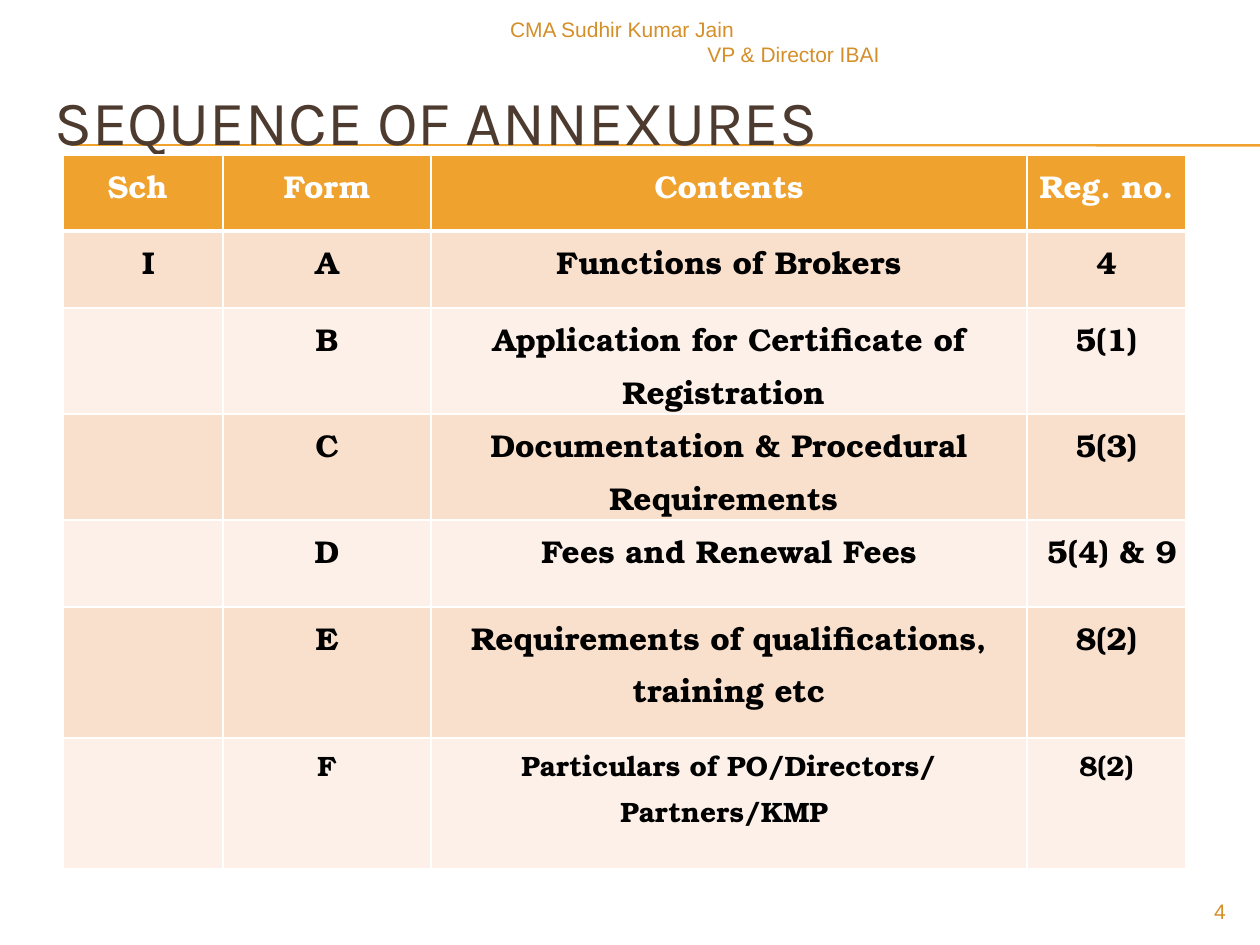
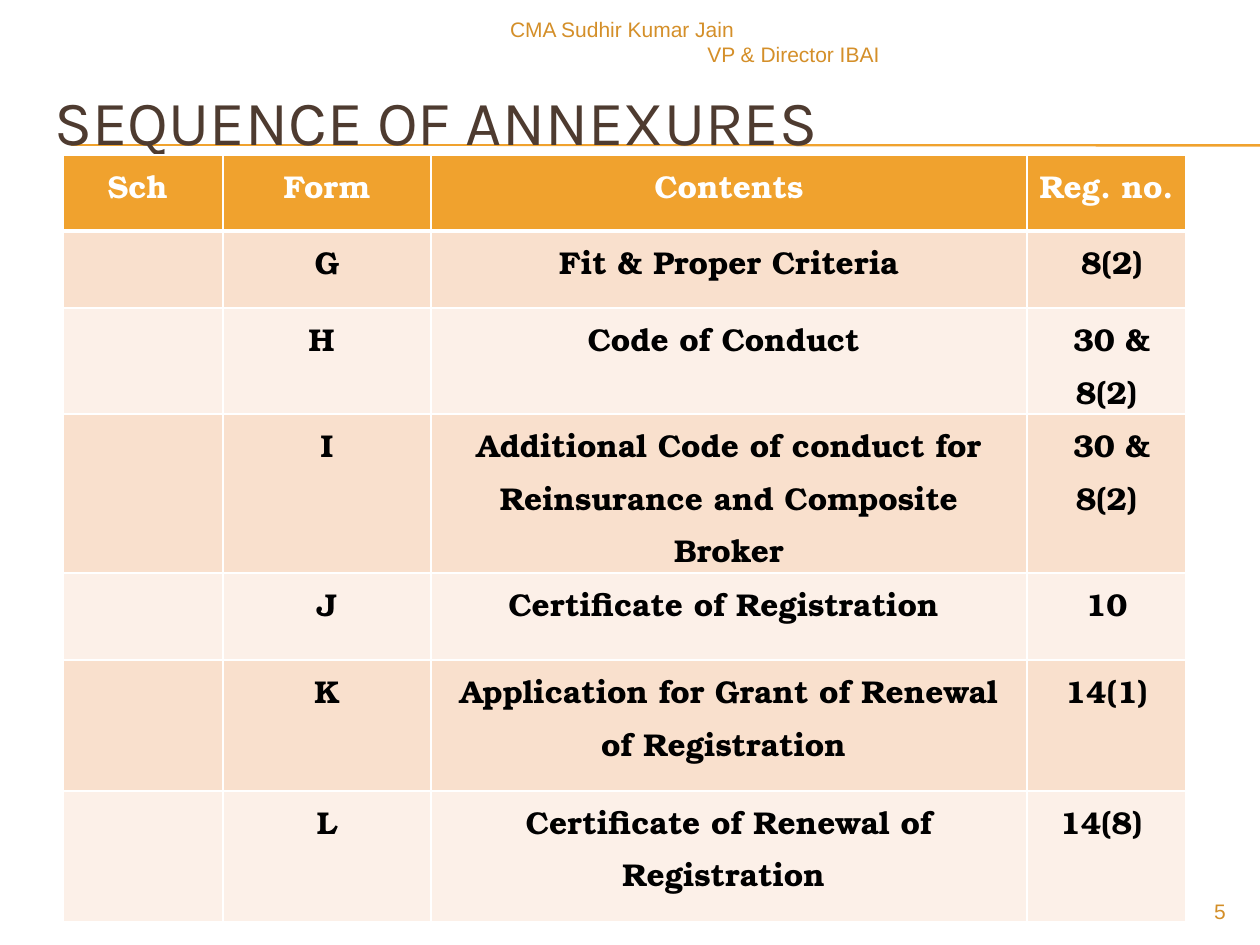
"""Build two slides listing the annexures with their forms and regulations."""
from lxml.etree import SubElement as Sub
from pptx import Presentation
from pptx.dml.color import RGBColor as Rgb
from pptx.enum.shapes import MSO_CONNECTOR as Conn
from pptx.enum.text import MSO_ANCHOR as Anchor, PP_ALIGN as Align
from pptx.oxml import parse_xml
from pptx.oxml.ns import nsdecls, qn
from pptx.util import Emu, Pt

TITLE = "SEQUENCE OF ANNEXURES"
NAME, ROLE = "CMA Sudhir Kumar Jain", "VP & Director IBAI"
HEAD = ("Sch ", "Form", "Contents", "Reg. no.")
PAGES = [
    {
        "no": "4",
        "heights": (76, 77, 106, 106, 87, 131, 131),
        "small": {6},
        "rows": [
            (" I", "A", "Functions of Brokers", "4"),
            ("", "B", "Application for Certificate of Registration ", "5(1)"),
            ("", "C", "Documentation & Procedural Requirements ", "5(3)"),
            ("", "D", "Fees and Renewal Fees", " 5(4) & 9"),
            ("", "E", "Requirements of qualifications, training etc", "8(2)"),
            ("", "F", "Particulars of PO/Directors/ Partners/KMP ", "8(2)"),
        ],
    },
    {
        "no": "5",
        "heights": (76, 77, 106, 159, 87, 131, 131),
        "small": set(),
        "rows": [
            ("", "G", "Fit & Proper Criteria", " 8(2)"),
            ("", "H ", "Code of Conduct ", " 30 & 8(2)"),
            ("", "I", "Additional Code of conduct for Reinsurance and Composite Broker", " 30 & 8(2)"),
            ("", "J", "Certificate of Registration ", "10"),
            ("", "K", "Application for Grant of Renewal of Registration ", "14(1)"),
            ("", "L", "Certificate of Renewal of Registration ", "14(8) "),
        ],
    },
]
WIDTHS = (160, 208, 596, 159)
RULES = ((145, 145), (145, 146))
INK = {
    "gold": "F0A22E", "brown": "4E3B30", "note": "D48F29", "page": "D38E27",
    "white": "FFFFFF", "black": "000000", "odd": "F9E0CD", "even": "FCF0E8",
}
FONTS = {"title": "Karla", "note": "Arial", "cell": "TeX Gyre Bonum"}


def px(n):
    return Emu(round(n * 914400 / 126))


def style(para, font, size, ink, align, bold=False):
    para.alignment = align
    for run in para.runs:
        face = run.font
        face.name, face.size, face.bold = FONTS[font], Pt(size), bold
        face.color.rgb = Rgb.from_string(INK[ink])


def label(slide, box, lines, font, size, ink, aligns, anchor=Anchor.TOP):
    frame = slide.shapes.add_textbox(*map(px, box)).text_frame
    frame.word_wrap, frame.vertical_anchor = True, anchor
    frame.text = "\n".join(lines)
    for para, align in zip(frame.paragraphs, aligns):
        style(para, font, size, ink, align)
    return frame


def rule(slide, start, end):
    line = slide.shapes.add_connector(
        Conn.STRAIGHT, px(71), px(start), px(1260), px(end))
    line.line.color.rgb = Rgb.from_string(INK["gold"])
    line.line.width = Pt(0.75)
    Sub(line._element.spPr, qn("a:effectLst"))


def edge(cell, top, bottom):
    props = cell._tc.get_or_add_tcPr()
    for i, (side, wide) in enumerate(zip("LRTB", (1, 1, top, bottom))):
        props.insert(i, parse_xml(
            f'<a:ln{side} {nsdecls("a")} w="{Pt(wide)}"><a:solidFill>'
            f'<a:srgbClr val="{INK["white"]}"/></a:solidFill></a:ln{side}>'))


def grid(slide, page):
    rows = [HEAD] + page["rows"]
    tall = page["heights"]
    table = slide.shapes.add_table(
        len(rows), len(WIDTHS), px(63), px(155), px(sum(WIDTHS)), px(sum(tall))).table
    table.first_row = table.horz_banding = False
    for col, wide in zip(table.columns, WIDTHS):
        col.width = px(wide)
    for r, (row, high) in enumerate(zip(rows, tall)):
        table.rows[r].height = px(high)
        fill = "gold" if r == 0 else "odd" if r % 2 else "even"
        for c, text in enumerate(row):
            cell = table.cell(r, c)
            cell.margin_left = cell.margin_right = px(9)
            cell.margin_top = cell.margin_bottom = 0
            cell.fill.solid()
            cell.fill.fore_color.rgb = Rgb.from_string(INK[fill])
            edge(cell, 3 if r == 1 else 1, 1 if r else 3)
            cell.text_frame.text = text
            para = cell.text_frame.paragraphs[0]
            para.line_spacing = 1.15
            style(para, "cell", 16 if r in page["small"] else 18,
                  "black" if r else "white", Align.CENTER, True)


def main():
    deck = Presentation()
    deck.slide_width, deck.slide_height = px(1260), px(945)
    for page in PAGES:
        slide = deck.slides.add_slide(deck.slide_layouts[6])
        for ends in RULES:
            rule(slide, *ends)
        label(slide, (42, 62, 1197, 116), [TITLE], "title", 36, "brown",
              [Align.LEFT], Anchor.MIDDLE)
        grid(slide, page)
        note = label(slide, (494, 10, 398, 40), [NAME, ROLE], "note", 12, "note",
                     [Align.LEFT, Align.RIGHT])
        note.margin_left = px(16)
        label(slide, (1134, 892, 104, 34), [page["no"]], "note", 12, "page", [Align.RIGHT])
    deck.save("out.pptx")


if __name__ == "__main__":
    main()
